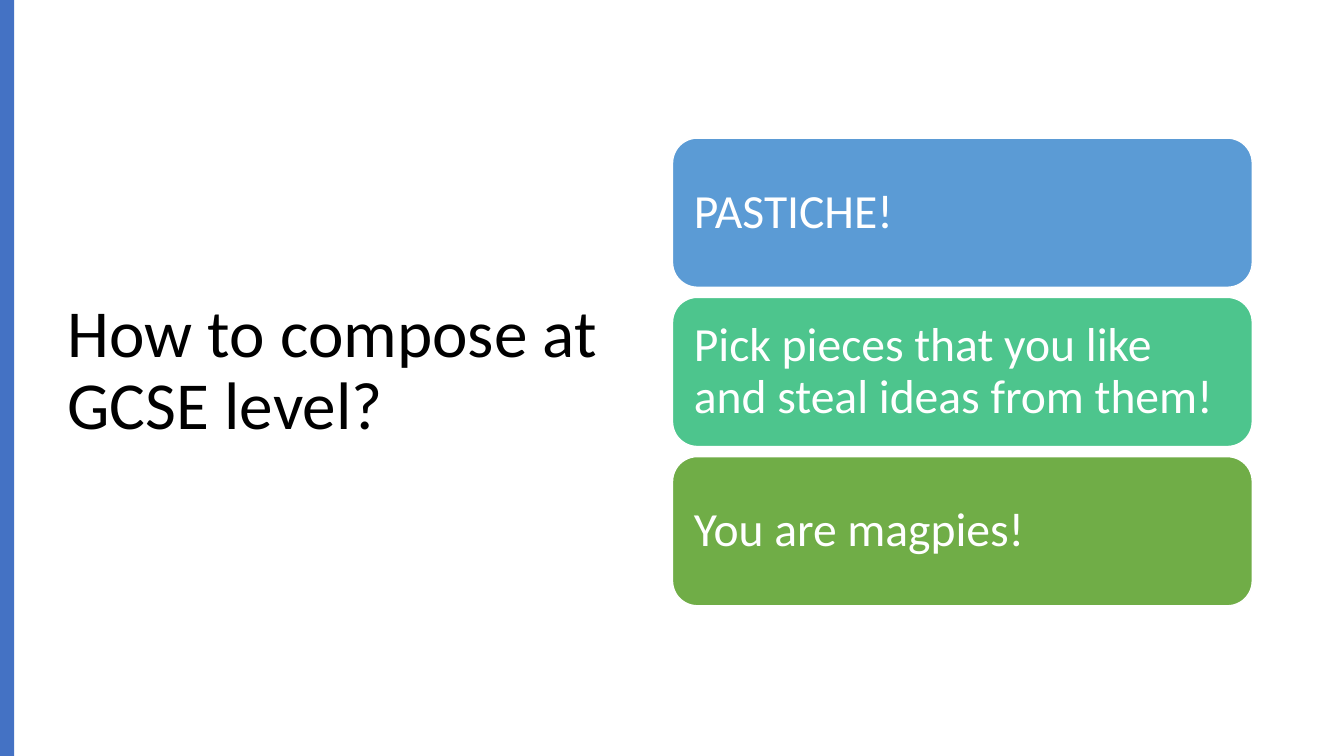
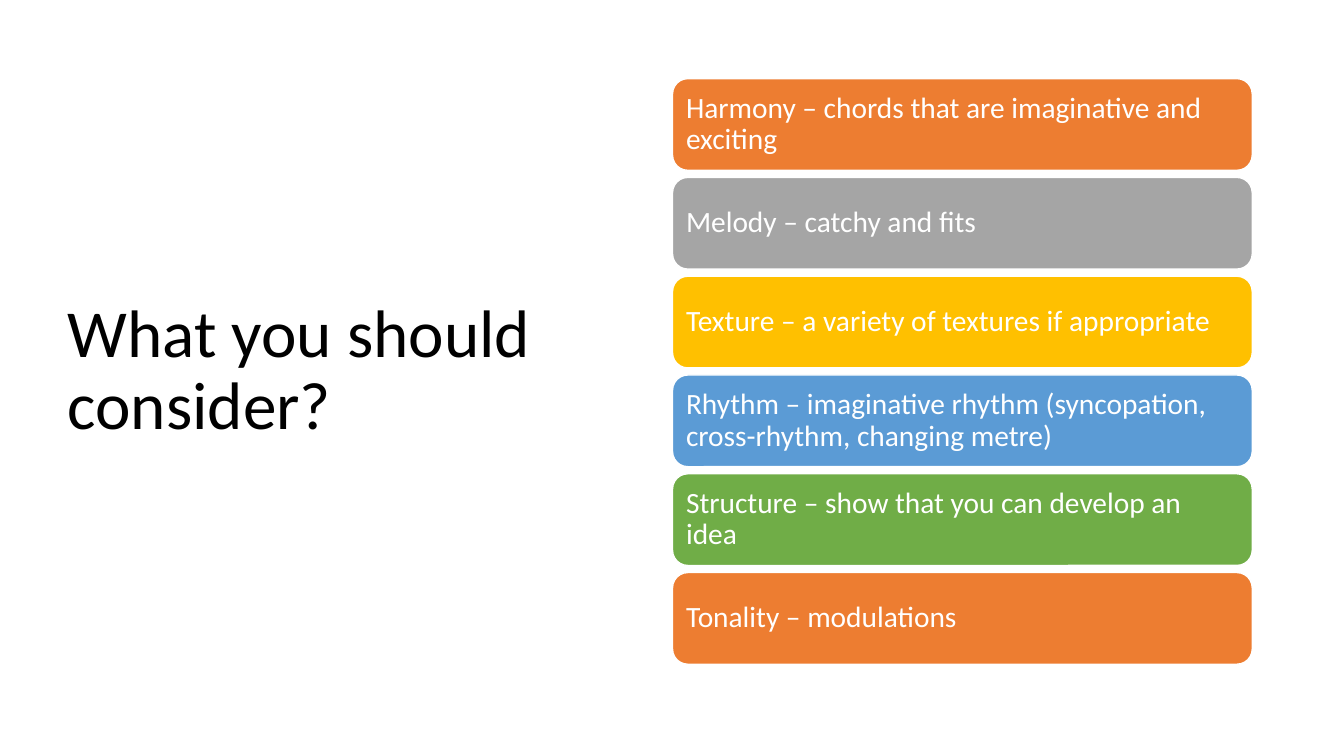
from dataclasses import dataclass

from pptx import Presentation
from pptx.dml.color import RGBColor
from pptx.enum.shapes import MSO_SHAPE
from pptx.enum.text import MSO_ANCHOR, MSO_AUTO_SIZE, PP_ALIGN
from pptx.util import Inches, Pt

RECT = MSO_SHAPE.RECTANGLE
ROUND = MSO_SHAPE.ROUNDED_RECTANGLE
MIDDLE = MSO_ANCHOR.MIDDLE
LEFT = PP_ALIGN.LEFT
NO_FIT = MSO_AUTO_SIZE.NONE

FONT = "Calibri"
WHITE = "FFFFFF"
BLACK = "000000"
ROYAL = "4472C4"
BLUE = "5B9BD5"
TEAL = "4DC58D"
GREEN = "70AD47"
ORANGE = "ED7D31"
GREY = "A5A5A5"
GOLD = "FFC000"

WIDE, HIGH = 13.33, 7.5
CARD_X, CARD_W = 6.67, 5.75
LINES = 0.9
AFTER = 0.35


@dataclass
class Card:
    text: str
    fill: str


@dataclass
class Stack:
    top: float
    high: float
    gap: float
    inset: float
    size: int
    cards: list[Card]


@dataclass
class Page:
    title: str
    stack: Stack
    band: bool = False


PAGES = [
    Page(
        "How to compose at GCSE level?",
        Stack(1.37, 1.48, 0.1, 0.14, 34, [
            Card("PASTICHE!", BLUE),
            Card("Pick pieces that you like and steal ideas from them!", TEAL),
            Card("You are magpies!", GREEN),
        ]),
        band=True,
    ),
    Page(
        "What you should consider?",
        Stack(0.78, 0.91, 0.07, 0.09, 21, [
            Card("Harmony – chords that are imaginative and exciting", ORANGE),
            Card("Melody – catchy and fits", GREY),
            Card("Texture – a variety of textures if appropriate", GOLD),
            Card("Rhythm – imaginative rhythm (syncopation, "
                 "cross-rhythm, changing metre)", BLUE),
            Card("Structure – show that you can develop an idea", GREEN),
            Card("Tonality – modulations", ORANGE),
        ]),
    ),
]


def tint(hue: str) -> RGBColor:
    return RGBColor.from_string(hue)


def write(shape, text: str, size: int, hue: str, inset: float,
          after: float = 0) -> None:
    frame = shape.text_frame
    frame.word_wrap = True
    frame.auto_size = NO_FIT
    frame.vertical_anchor = MIDDLE
    frame.margin_left = frame.margin_right = Inches(inset)
    frame.margin_top = frame.margin_bottom = Inches(inset)
    para = frame.paragraphs[0]
    para.alignment = LEFT
    para.line_spacing = LINES
    para.space_after = Pt(round(size * after))
    run = para.add_run()
    run.text = text
    run.font.name = FONT
    run.font.size = Pt(size)
    run.font.color.rgb = tint(hue)


def add_box(slide, kind, left: float, top: float, wide: float, high: float,
            fill: str):
    box = slide.shapes.add_shape(
        kind, Inches(left), Inches(top), Inches(wide), Inches(high))
    box.shadow.inherit = False
    box.fill.solid()
    box.fill.fore_color.rgb = tint(fill)
    box.line.fill.background()
    return box


def add_title(slide, text: str) -> None:
    title = slide.shapes.title
    title.left, title.top = Inches(0.57), Inches(0.68)
    title.width, title.height = Inches(5.67), Inches(6.02)
    write(title, text, 48, BLACK, 0.1)


def add_stack(slide, stack: Stack) -> None:
    for row, card in enumerate(stack.cards):
        top = stack.top + row * (stack.high + stack.gap)
        box = add_box(slide, ROUND, CARD_X, top, CARD_W, stack.high, card.fill)
        box.line.color.rgb = tint(WHITE)
        box.line.width = Pt(1)
        write(box, card.text, stack.size, WHITE, stack.inset, AFTER)


def add_page(deck, page: Page) -> None:
    slide = deck.slides.add_slide(deck.slide_layouts[5])
    add_title(slide, page.title)
    if page.band:
        add_box(slide, RECT, 0, 0, 0.14, HIGH, ROYAL)
    add_stack(slide, page.stack)


def main() -> None:
    deck = Presentation()
    deck.slide_width, deck.slide_height = Inches(WIDE), Inches(HIGH)
    for page in PAGES:
        add_page(deck, page)
    deck.save("out.pptx")


if __name__ == "__main__":
    main()
